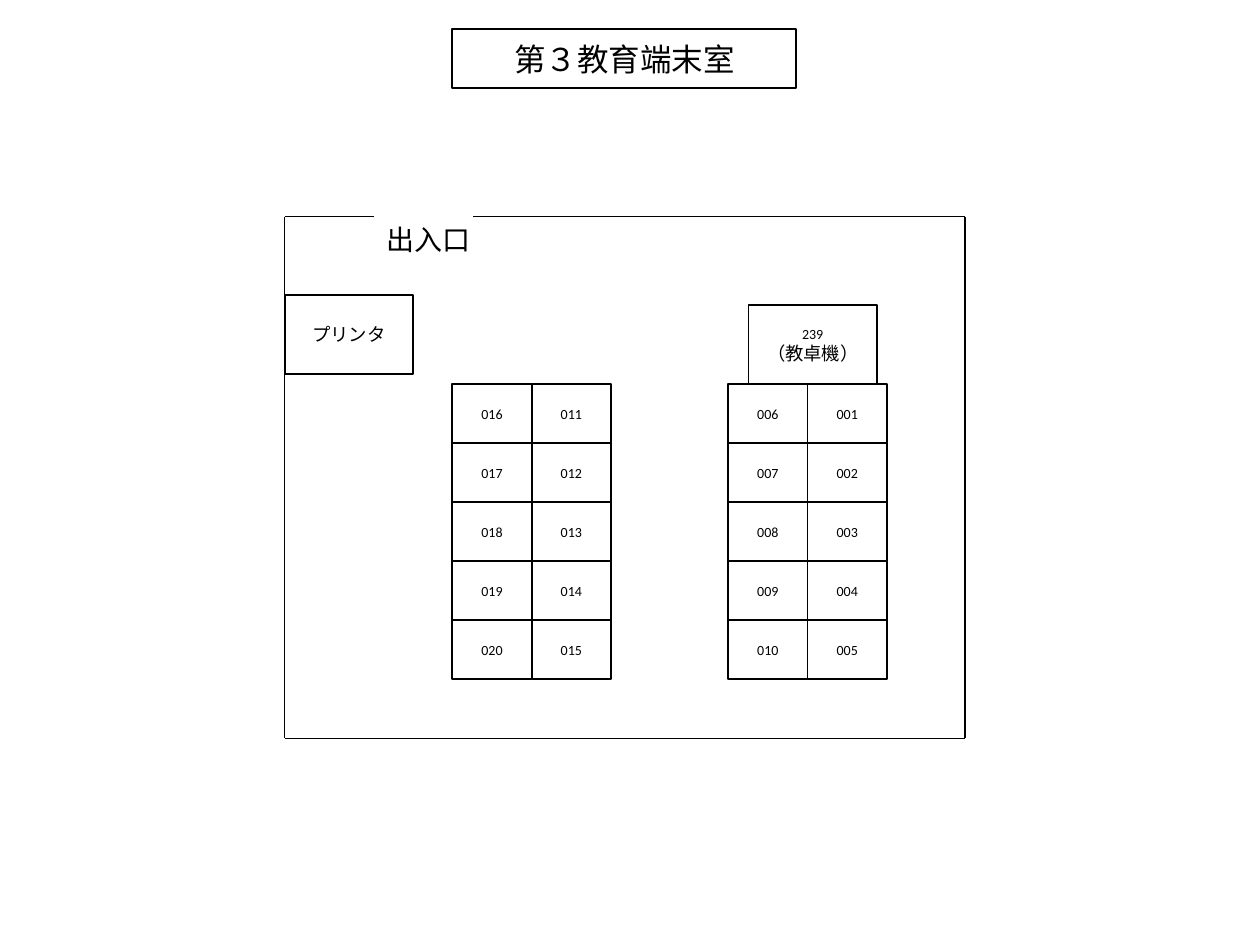
from dataclasses import dataclass

from lxml import etree
from pptx import Presentation
from pptx.dml.color import RGBColor
from pptx.enum.shapes import MSO_CONNECTOR, MSO_SHAPE
from pptx.enum.text import MSO_ANCHOR, PP_ALIGN
from pptx.oxml.ns import qn
from pptx.util import Inches, Pt

RECT = MSO_SHAPE.RECTANGLE
LINE = MSO_CONNECTOR.STRAIGHT
MIDDLE = MSO_ANCHOR.MIDDLE
CENTER = PP_ALIGN.CENTER


@dataclass(frozen=True)
class Theme:
    font: str = "Calibri"
    ink: RGBColor = RGBColor(0, 0, 0)
    paper: RGBColor = RGBColor(255, 255, 255)
    title: float = 18
    door: float = 16
    label: float = 10.5
    seat: float = 8
    edge: float = 1
    wall: float = 0.75


THEME = Theme()
SEAT_W, SEAT_H = 0.63, 0.468
SEAT_TOP = 3.05
ROWS = 5
# Left edge of each seat column and its first seat number
COLUMNS = [(3.59, 16), (4.22, 11), (5.78, 6), (6.41, 1)]

LEFT, TOP, RIGHT, BOTTOM = 2.26, 1.72, 7.66, 5.86
DOOR_LEFT, DOOR_RIGHT = 2.97, 3.75
# Walls run from one side of the door around the room to the other
CORNERS = [(DOOR_LEFT, TOP), (LEFT, TOP), (LEFT, BOTTOM),
           (RIGHT, BOTTOM), (RIGHT, TOP), (DOOR_RIGHT, TOP)]


def write(frame, lines):
    """Fill a frame with centred (text, size) lines."""
    frame.word_wrap = True
    frame.text = "\n".join(text for text, _ in lines)
    for para, (_, size) in zip(frame.paragraphs, lines):
        para.alignment = CENTER
        for run in para.runs:
            run.font.name = THEME.font
            run.font.size = Pt(size)
            run.font.color.rgb = THEME.ink


def add_box(slide, left, top, width, height, *lines):
    box = slide.shapes.add_shape(
        RECT, Inches(left), Inches(top), Inches(width), Inches(height))
    box.shadow.inherit = False
    box.fill.solid()
    box.fill.fore_color.rgb = THEME.paper
    box.line.color.rgb = THEME.ink
    box.line.width = Pt(THEME.edge)
    box.text_frame.vertical_anchor = MIDDLE
    write(box.text_frame, lines)


def add_label(slide, left, top, width, height, *lines):
    label = slide.shapes.add_textbox(
        Inches(left), Inches(top), Inches(width), Inches(height))
    write(label.text_frame, lines)


def add_wall(slide, start, end):
    wall = slide.shapes.add_connector(
        LINE, *(Inches(value) for value in start + end))
    wall.line.color.rgb = THEME.ink
    wall.line.width = Pt(THEME.wall)
    props = wall._element.find(qn("p:spPr"))
    etree.SubElement(props, qn("a:effectLst"))


def add_seats(slide):
    for left, first in COLUMNS:
        for row in range(ROWS):
            add_box(slide, left, SEAT_TOP + row * SEAT_H, SEAT_W, SEAT_H,
                    (f"{first + row:03}", THEME.seat))


def main():
    deck = Presentation()
    deck.slide_width, deck.slide_height = Inches(10), Inches(7.5)
    slide = deck.slides.add_slide(deck.slide_layouts[6])

    add_seats(slide)
    add_box(slide, 5.94, 2.42, 1.02, 0.63,
            ("239", THEME.seat), ("（教卓機）", THEME.label))
    add_box(slide, 2.26, 2.34, 1.02, 0.63, ("プリンタ", THEME.label))
    for start, end in zip(CORNERS, CORNERS[1:]):
        add_wall(slide, start, end)
    add_label(slide, 2.66, 1.72, 1.48, 0.37, ("出入口", THEME.door))
    add_box(slide, 3.59, 0.23, 2.73, 0.47, ("第３教育端末室", THEME.title))

    deck.save("out.pptx")


if __name__ == "__main__":
    main()
